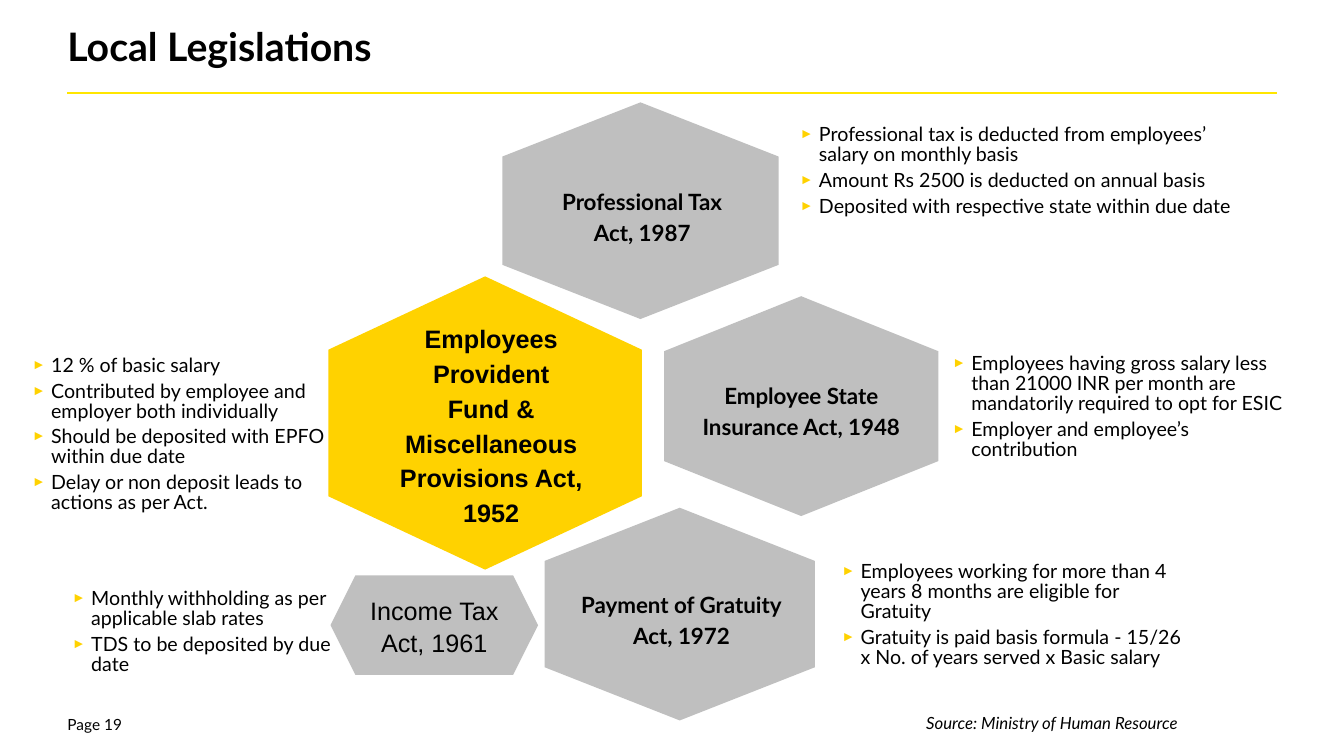
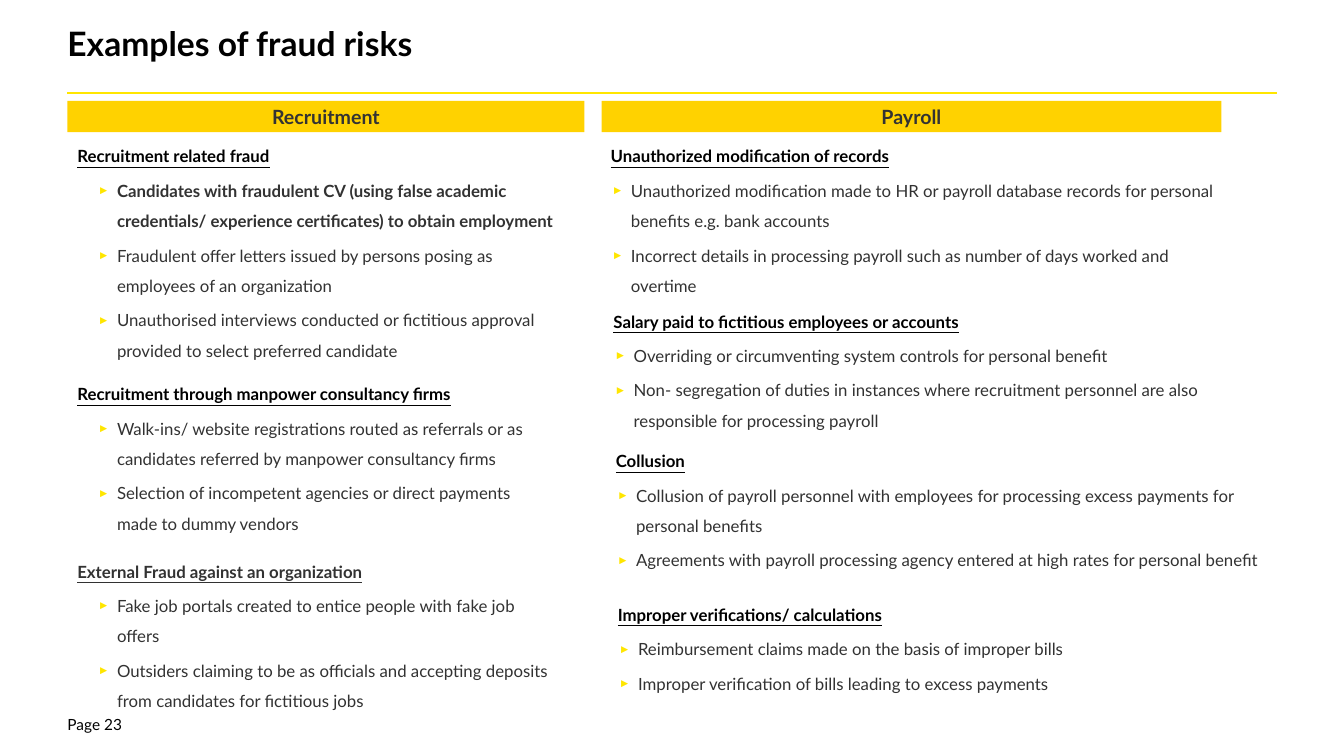
from lxml import etree
from pptx import Presentation
from pptx.dml.color import RGBColor
from pptx.enum.shapes import MSO_CONNECTOR, MSO_SHAPE
from pptx.enum.text import MSO_ANCHOR as Anchor, MSO_AUTO_SIZE as AutoSize, PP_ALIGN as Align
from pptx.oxml.ns import qn
from pptx.util import Cm, Pt

BLACK = RGBColor(0x00, 0x00, 0x00)
CHARCOAL = RGBColor(0x32, 0x32, 0x32)
BAND_TEXT = RGBColor(0x33, 0x33, 0x33)
GREY = RGBColor(0xBF, 0xBF, 0xBF)
GOLD = RGBColor(0xFF, 0xD2, 0x00)
YELLOW = RGBColor(0xFF, 0xE6, 0x00)

TITLE_ONLY = 5
NO_MARGINS = dict.fromkeys(("margin_left", "margin_top", "margin_right", "margin_bottom"), 0)
TIGHT = {"line_spacing": 0.85, "space_after": Pt(4)}
LABEL = {"line_spacing": 1.15, "alignment": Align.CENTER}
SECTION_HEAD = {"space_before": Pt(3)}
SECTION_ITEM = {"space_before": Pt(3), "line_spacing": 1.5, "level": 1}
HANGING = 0.48


def apply(target, formats):
    for name, value in formats.items():
        setattr(target, name, value)


def cm_box(box):
    return [Cm(length) for length in box]


class Deck:
    """Holds the shared style and the slide being filled."""

    def __init__(self):
        self.presentation = Presentation()
        apply(self.presentation, {"slide_width": Cm(33.87), "slide_height": Cm(19.05)})
        self.slide = None

    def new_slide(self, title, size, page):
        layout = self.presentation.slide_layouts[TITLE_ONLY]
        self.slide = self.presentation.slides.add_slide(layout)
        heading = self.slide.shapes.title
        left, top, width, height = cm_box((1.7, 0.74, 30.48, 1.6))
        apply(heading, {"left": left, "top": top, "width": width, "height": height})
        apply(heading.text_frame, {**NO_MARGINS, "vertical_anchor": Anchor.TOP,
                                   "auto_size": AutoSize.NONE})
        self.add_line(heading.text_frame, title, size, bold=True,
                      paragraph={"line_spacing": 0.85, "alignment": Align.LEFT})
        self.rule()
        self.text((1.7, 18.03, 2.67, 0.56), f"Page {page}", 11, frame=NO_MARGINS)

    def rule(self):
        rule = self.slide.shapes.add_connector(
            MSO_CONNECTOR.STRAIGHT, *cm_box((1.7, 2.34, 32.18, 2.34)))
        rule.line.color.rgb = YELLOW
        rule.line.width = Pt(1.5)
        etree.SubElement(rule._element.spPr, qn("a:effectLst"))

    def add_line(self, frame, text, size, colour=BLACK, face="Lato", paragraph=None, **font):
        """Fill the empty first paragraph, or add one after the text."""
        line = frame.add_paragraph() if frame.text else frame.paragraphs[0]
        apply(line, paragraph or {})
        run = line.add_run()
        run.text = text
        apply(run.font, {"name": face, "size": Pt(size), **font})
        run.font.color.rgb = colour
        return line

    def frame(self, box, **formats):
        frame = self.slide.shapes.add_textbox(*cm_box(box)).text_frame
        apply(frame, {"word_wrap": True, **formats})
        return frame

    def text(self, box, text, size, frame=None, **style):
        self.add_line(self.frame(box, **(frame or {})), text, size, **style)

    def label(self, box, lines, size=16, face="Lato"):
        frame = self.frame(box, word_wrap=False, vertical_anchor=Anchor.MIDDLE)
        for line in lines:
            self.add_line(frame, line, size, face=face, paragraph=LABEL, bold=True)

    def bullet(self, line, colour, indent):
        properties = line._p.get_or_add_pPr()
        properties.set("marL", str(Cm(indent)))
        properties.set("indent", str(-Cm(HANGING)))
        tint = etree.SubElement(properties, qn("a:buClr"))
        etree.SubElement(tint, qn("a:srgbClr"), val=str(colour))
        etree.SubElement(properties, qn("a:buSzPct"), val="70000")
        etree.SubElement(properties, qn("a:buFont"), typeface="Arial")
        etree.SubElement(properties, qn("a:buChar"), char="►")

    def bullets(self, box, items):
        frame = self.frame(box)
        for item in items:
            self.bullet(self.add_line(frame, item, 14, paragraph=TIGHT), GOLD, HANGING)

    def section(self, box, heading, items, indent, heading_colour=BLACK, bold_item=None):
        """Underlined heading with bullets; bold_item is the index of a bold bullet."""
        frame = self.frame(box)
        self.add_line(frame, heading, 12, heading_colour, paragraph=SECTION_HEAD,
                      bold=True, underline=True)
        for index, item in enumerate(items):
            line = self.add_line(frame, item, 12, CHARCOAL, paragraph=SECTION_ITEM,
                                 bold=index == bold_item)
            self.bullet(line, YELLOW, indent)

    def block(self, kind, box, fill, rotation=0):
        block = self.slide.shapes.add_shape(kind, *cm_box(box))
        block.shadow.inherit = False
        block.fill.solid()
        block.fill.fore_color.rgb = fill
        block.line.fill.background()
        block.rotation = rotation
        apply(block.text_frame, {"word_wrap": True, "vertical_anchor": Anchor.MIDDLE})
        return block

    def hexagon(self, box, fill=GREY, rotation=90):
        return self.block(MSO_SHAPE.HEXAGON, box, fill, rotation)

    def band(self, box, text):
        band = self.block(MSO_SHAPE.RECTANGLE, box, GOLD)
        self.add_line(band.text_frame, text, 14, BAND_TEXT, bold=True,
                      paragraph={"alignment": Align.CENTER})


def legislations(deck):
    deck.new_slide("Local Legislations", 28, 19)

    deck.hexagon((8.53, 6.71, 7.39, 7.9), GOLD)
    deck.label((9.8, 8.74, 5.16, 3.86),
               ["Employees Provident", "Fund & Miscellaneous", "Provisions Act, 1952"],
               18, "Arial")
    deck.bullets((0.56, 8.86, 8.43, 4.24), [
        "12 % of basic salary",
        "Contributed by employee and employer both individually",
        "Should be deposited with EPFO within due date",
        "Delay or non deposit leads to actions as per Act.",
    ])

    grey_acts = [
        ((13.41, 1.83, 5.46, 6.96), (13.39, 4.19),
         ["Professional Tax", "Act, 1987"], (19.91, 3.05, 12.04, 2.57),
         ["Professional tax is deducted from employees’ salary on monthly basis",
          "Amount Rs 2500 is deducted on annual basis",
          "Deposited with respective state within due date"]),
        ((17.42, 6.78, 5.54, 6.91), (17.4, 9.09),
         ["Employee State", "Insurance Act, 1948"], (23.75, 8.81, 9.19, 2.95),
         ["Employees having gross salary less than 21000 INR per month are "
          "mandatorily required to opt for ESIC",
          "Employer and employee’s contribution"]),
        ((14.45, 12.07, 5.36, 6.81), (14.38, 14.35),
         ["Payment of Gratuity", "Act, 1972"], (20.96, 14.05, 9.19, 3.45),
         ["Employees working for more than 4 years 8 months are eligible for Gratuity",
          "Gratuity is paid basis formula - 15/26 x No. of years served x Basic salary"]),
    ]
    for hexagon_box, label_corner, act, notes_box, notes in grey_acts:
        deck.hexagon(hexagon_box)
        deck.label((*label_corner, 5.59, 2.44), act)
        deck.bullets(notes_box, notes)

    income_tax = deck.hexagon((8.33, 14.5, 5.23, 2.51), rotation=0)
    deck.add_line(income_tax.text_frame, "Income Tax Act, 1961", 18, face="Arial",
                  paragraph={"alignment": Align.CENTER, "line_spacing": 1.08})
    deck.bullets((1.57, 14.73, 7.92, 2.44), [
        "Monthly withholding as per applicable slab rates",
        "TDS to be deposited by due date",
    ])
    deck.text((23.09, 17.91, 7.85, 0.69), "Source: Ministry of Human Resource", 12,
              paragraph=TIGHT, italic=True)


def fraud_risks(deck):
    deck.new_slide("Examples of fraud risks", 24, 23)

    deck.band((1.7, 2.54, 13.03, 0.79), "Recruitment")
    recruitment_indent = 1
    deck.section((1.7, 3.56, 13.03, 5.77), "Recruitment related fraud", [
        "Candidates with fraudulent CV (using false academic credentials/ experience "
        "certificates) to obtain employment",
        "Fraudulent offer letters issued by persons posing as employees of an organization",
        "Unauthorised interviews conducted or fictitious approval provided to select "
        "preferred candidate",
    ], recruitment_indent, bold_item=0)
    deck.section((1.7, 9.55, 12.4, 3.96), "Recruitment through manpower consultancy firms", [
        "Walk-ins/ website registrations routed as referrals or as candidates referred by "
        "manpower consultancy firms",
        "Selection of incompetent agencies or direct payments made to dummy vendors",
    ], recruitment_indent)
    deck.section((1.7, 14.02, 12.65, 3.96), "External Fraud against an organization", [
        "Fake job portals created to entice people with fake job offers",
        "Outsiders claiming to be as officials and accepting deposits from candidates for "
        "fictitious jobs",
    ], recruitment_indent, heading_colour=CHARCOAL)

    deck.band((15.16, 2.54, 15.62, 0.79), "Payroll")
    payroll = [
        ((15.14, 3.56, 15.88, 3.99), "Unauthorized modification of records",
         ["Unauthorized modification made to HR or payroll database records for personal "
          "benefits e.g. bank accounts",
          "Incorrect details in processing payroll such as number of days worked and "
          "overtime"]),
        ((15.21, 7.72, 16.94, 3.2), "Salary paid to fictitious employees or accounts",
         ["Overriding or circumventing system controls for personal benefit",
          "Non- segregation of duties in instances where recruitment personnel are also "
          "responsible for processing payroll"]),
        ((15.27, 11.24, 16.94, 3.6), "Collusion",
         ["Collusion of payroll personnel with employees for processing excess payments "
          "for personal benefits",
          "Agreements with payroll processing agency entered at high rates for personal "
          "benefit"]),
        ((15.32, 15.11, 16.94, 3.2), "Improper verifications/ calculations",
         ["Reimbursement claims made on the basis of improper bills",
          "Improper verification of bills leading to excess payments"]),
    ]
    for box, heading, risks in payroll:
        deck.section(box, heading, risks, indent=0.51)


def main():
    deck = Deck()
    legislations(deck)
    fraud_risks(deck)
    deck.presentation.save("out.pptx")


if __name__ == "__main__":
    main()
